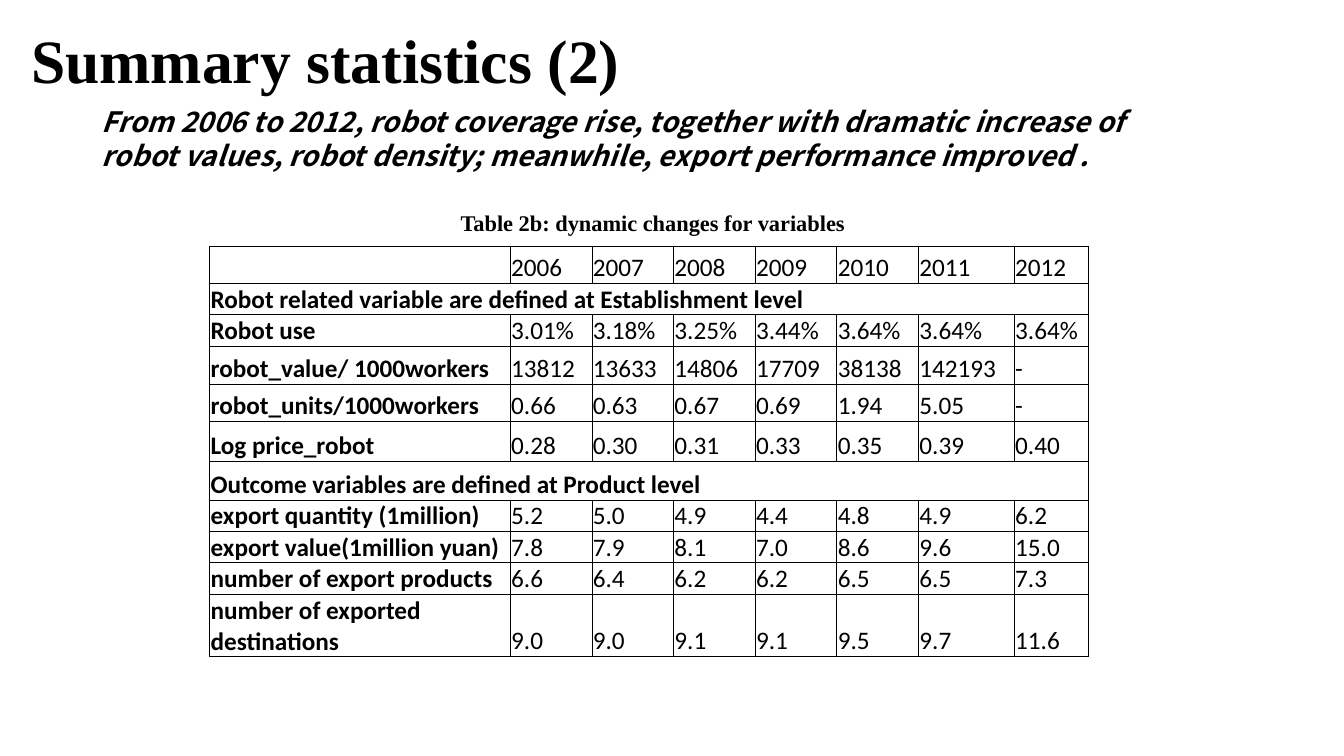
from lxml import etree
from pptx import Presentation
from pptx.dml.color import RGBColor
from pptx.enum.text import MSO_ANCHOR, PP_ALIGN
from pptx.oxml.ns import qn
from pptx.util import Inches, Pt

MIDDLE, TOP, BOTTOM = MSO_ANCHOR.MIDDLE, MSO_ANCHOR.TOP, MSO_ANCHOR.BOTTOM
LEFT, JUSTIFY = PP_ALIGN.LEFT, PP_ALIGN.JUSTIFY
BLACK = "000000"
SERIF, SANS, CJK = "Times New Roman", "Calibri", "Noto Sans CJK SC"
COLUMN_WIDTHS = [2.98] + [0.81] * 5 + [0.95, 0.74]
ROW_HEIGHTS = [0.37, 0.31, 0.32, 0.37, 0.37, 0.4, 0.38, 0.31, 0.31, 0.32, 0.61]
STATISTICS = [
    ["", "2006", "2007", "2008", "2009", "2010", "2011", "2012"],
    ["Robot related variable are defined at Establishment level"],
    ["Robot use", "3.01%", "3.18%", "3.25%", "3.44%", "3.64%", "3.64%", "3.64%"],
    ["robot_value/ 1000workers", "13812", "13633", "14806", "17709", "38138", "142193", "-"],
    ["robot_units/1000workers", "0.66", "0.63", "0.67", "0.69", "1.94", "5.05", "-"],
    ["Log price_robot", "0.28", "0.30", "0.31", "0.33", "0.35", "0.39", "0.40"],
    ["Outcome variables are defined at Product level"],
    ["export quantity (1million)", "5.2", "5.0", "4.9", "4.4", "4.8", "4.9", "6.2"],
    ["export value(1million yuan)", "7.8", "7.9", "8.1", "7.0", "8.6", "9.6", "15.0"],
    ["number of export products", "6.6", "6.4", "6.2", "6.2", "6.5", "6.5", "7.3"],
    ["number of exported destinations", "9.0", "9.0", "9.1", "9.1", "9.5", "9.7", "11.6"],
]


def color(value):
    """Turn a hex string into a colour."""
    return RGBColor.from_string(value)


def add_run(para, text, size, font, bold=False, italic=False):
    """Append one formatted run to a paragraph."""
    run = para.add_run()
    run.text = text
    run.font.size = Pt(size)
    run.font.name = font
    run.font.bold = bold
    run.font.italic = italic
    run.font.color.rgb = color(BLACK)


def add_text(page, place, text, size, font, anchor=TOP, align=LEFT,
             spacing=1.0, indent=0, italic=False):
    """Add a bold, wrapped text box and return nothing."""
    box = page.shapes.add_textbox(*map(Inches, place))
    frame = box.text_frame
    frame.word_wrap = True
    frame.vertical_anchor = anchor
    para = frame.paragraphs[0]
    para.alignment = align
    para.line_spacing = spacing
    if indent:
        para._p.get_or_add_pPr().set("indent", str(Inches(indent)))
    add_run(para, text, size, font, True, italic)


def draw_borders(cell):
    """Give a cell thin black lines on all sides."""
    properties = cell._tc.get_or_add_tcPr()
    for index, side in enumerate(("a:lnL", "a:lnR", "a:lnT", "a:lnB")):
        line = etree.Element(qn(side), w=str(Pt(0.5)))
        fill = etree.SubElement(line, qn("a:solidFill"))
        etree.SubElement(fill, qn("a:srgbClr"), val=BLACK)
        properties.insert(index, line)


def fill_cell(cell, text, bold):
    """Format one table cell and write its text."""
    cell.fill.background()
    cell.vertical_anchor = BOTTOM
    cell.margin_left = cell.margin_right = cell.margin_top = Inches(0.01)
    cell.margin_bottom = 0
    draw_borders(cell)
    if text:
        add_run(cell.text_frame.paragraphs[0], text, 18, SANS, bold)


def add_statistics(page, left, top):
    """Add the table, with one-entry rows merged across all columns."""
    size = sum(COLUMN_WIDTHS), sum(ROW_HEIGHTS)
    table = page.shapes.add_table(
        len(ROW_HEIGHTS), len(COLUMN_WIDTHS), *map(Inches, (left, top, *size))).table
    table.first_row = table.horz_banding = False
    for column, width in zip(table.columns, COLUMN_WIDTHS):
        column.width = Inches(width)
    for number, (height, entries) in enumerate(zip(ROW_HEIGHTS, STATISTICS)):
        table.rows[number].height = Inches(height)
        for position in range(len(COLUMN_WIDTHS)):
            text = entries[position] if position < len(entries) else ""
            fill_cell(table.cell(number, position), text, position == 0)
        if len(entries) == 1:
            table.cell(number, 0).merge(table.cell(number, len(COLUMN_WIDTHS) - 1))


def main():
    """Build the slide and save it."""
    deck = Presentation()
    deck.slide_width, deck.slide_height = Inches(13.33), Inches(7.5)
    page = deck.slides.add_slide(deck.slide_layouts[6])
    add_text(page, (0.21, 0.11, 11.5, 1.04), "Summary statistics (2)", 44, SERIF,
             anchor=MIDDLE, spacing=0.9)
    add_statistics(page, 2.08, 2.44)
    add_text(page, (4.14, 1.89, 6.67, 0.46), "Table 2b: dynamic changes for variables",
             16, SERIF, align=JUSTIFY, spacing=1.5, indent=0.33)
    add_text(page, (0.91, 0.99, 10.93, 0.77),
             "From 2006 to 2012, robot coverage rise, together with dramatic increase of "
             "robot values, robot density; meanwhile, export performance improved .",
             20, CJK, italic=True)
    deck.save("out.pptx")


if __name__ == "__main__":
    main()
